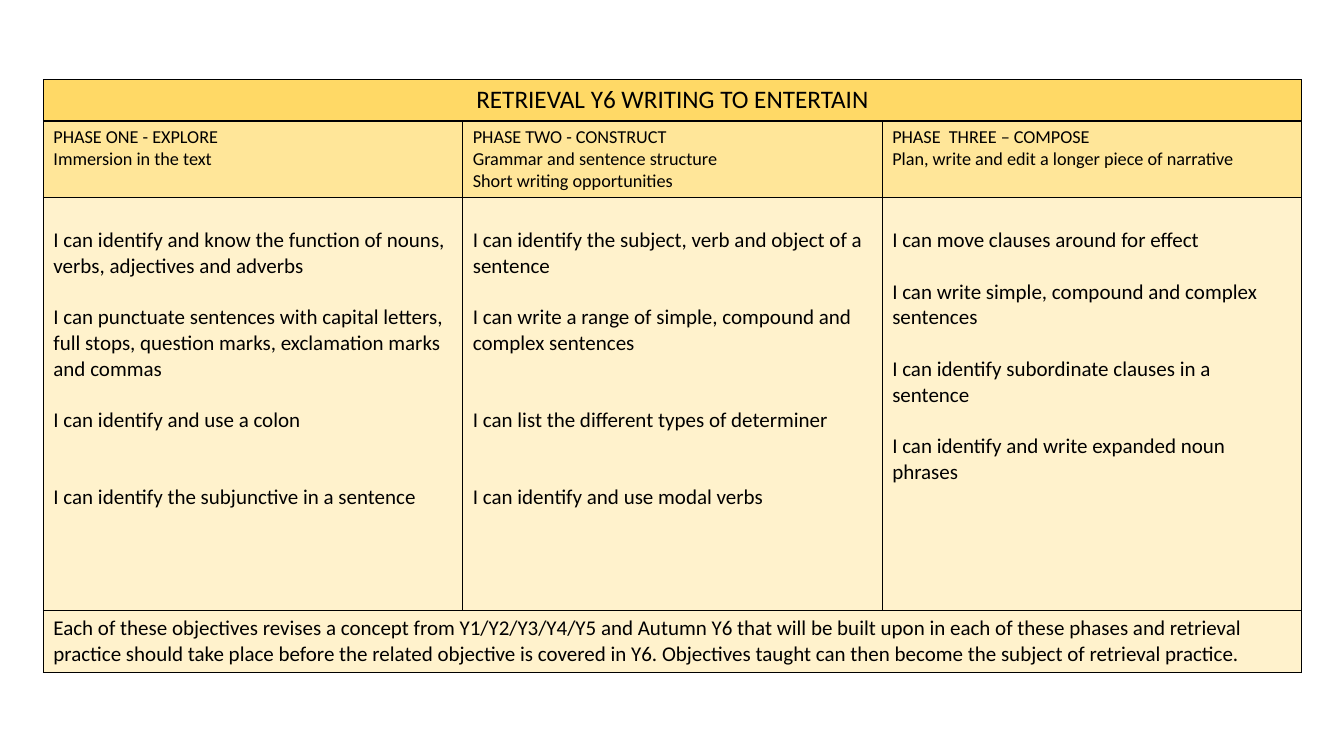
"""Build the Year 6 retrieval overview slide with its three writing phases."""
from lxml import etree
from pptx import Presentation
from pptx.dml.color import RGBColor
from pptx.enum.text import PP_ALIGN
from pptx.oxml.ns import qn
from pptx.util import Inches, Pt

LEFT, CENTER = PP_ALIGN.LEFT, PP_ALIGN.CENTER
FONT = "Calibri"
COLORS = {"title": "FFD966", "phase": "FFE699", "body": "FFF2CC", "ink": "000000"}
BODY_SIZE = 15
LINE = 18.3
ROW_HEIGHTS = [0.41, 0.75, 4.1, 0.59]
COLUMN_WIDTH = 4.16

TITLE = "RETRIEVAL Y6 WRITING TO ENTERTAIN"
PHASES = [
    ["PHASE ONE - EXPLORE", "Immersion in the text"],
    ["PHASE TWO - CONSTRUCT", "Grammar and sentence structure",
     "Short writing opportunities"],
    ["PHASE  THREE – COMPOSE", "Plan, write and edit a longer piece of narrative"],
]
OBJECTIVES = [
    ["I can identify and know the function of nouns, verbs, adjectives and adverbs",
     "I can punctuate sentences with capital letters, full stops, question marks, "
     "exclamation marks and commas",
     "I can identify and use a colon",
     "I can identify the subjunctive in a sentence"],
    ["I can identify the subject, verb and object of a sentence",
     "I can write a range of simple, compound and complex sentences",
     "I can list the different types of determiner",
     "I can identify and use modal verbs"],
    ["I can move clauses around for effect",
     "I can write simple, compound and complex sentences",
     "I can identify subordinate clauses in a sentence",
     "I can identify and write expanded noun phrases"],
]
LINE_GAPS = [[0, 1, 1, 2], [0, 1, 2, 2], [0, 1, 1, 1]]
SUMMARY = (
    "Each of these objectives revises a concept from Y1/Y2/Y3/Y4/Y5 and Autumn Y6 "
    "that will be built upon in each of these phases and retrieval practice should "
    "take place before the related objective is covered in Y6. Objectives taught can "
    "then become the subject of retrieval practice."
)


def set_borders(cell):
    """Draw a thin line on every side of a cell."""
    properties = cell._tc.get_or_add_tcPr()
    for side in ("a:lnL", "a:lnR", "a:lnT", "a:lnB"):
        line = etree.SubElement(properties, qn(side), w=str(Pt(1)))
        fill = etree.SubElement(line, qn("a:solidFill"))
        etree.SubElement(fill, qn("a:srgbClr"), val=COLORS["ink"])


def fill_cell(cell, color):
    """Give a cell its background colour."""
    cell.fill.solid()
    cell.fill.fore_color.rgb = RGBColor.from_string(COLORS[color])


def write_cell(cell, lines, size=BODY_SIZE, align=LEFT, gaps=None, margin_top=0.05):
    """Write one paragraph per line, with gaps counted in blank line heights."""
    cell.margin_top = Inches(margin_top)
    frame = cell.text_frame
    for index, text in enumerate(lines):
        para = frame.paragraphs[0] if index == 0 else frame.add_paragraph()
        para.alignment = align
        if gaps:
            para.space_before = Pt(gaps[index] * LINE)
        span = para.add_run()
        span.text = text
        span.font.name = FONT
        span.font.size = Pt(size)
        span.font.bold = False
        span.font.color.rgb = RGBColor.from_string(COLORS["ink"])


def add_grid(page):
    """Add the bordered table with full-width first and last rows."""
    columns = len(PHASES)
    frame = page.shapes.add_table(
        len(ROW_HEIGHTS), columns, Inches(0.43), Inches(0.79),
        Inches(COLUMN_WIDTH * columns), Inches(sum(ROW_HEIGHTS)))
    table = frame.table
    table.first_row = False
    table.horz_banding = False
    for column in table.columns:
        column.width = Inches(COLUMN_WIDTH)
    row_colors = ["title", "phase", "body", "body"]
    for row, height, color in zip(table.rows, ROW_HEIGHTS, row_colors):
        row.height = Inches(height)
        for cell in row.cells:
            set_borders(cell)
            fill_cell(cell, color)
    for row in (0, len(ROW_HEIGHTS) - 1):
        table.cell(row, 0).merge(table.cell(row, columns - 1))
    return table


def main():
    """Create the deck and save it."""
    deck = Presentation()
    deck.slide_width, deck.slide_height = Inches(13.33), Inches(7.5)
    page = deck.slides.add_slide(deck.slide_layouts[6])
    table = add_grid(page)
    write_cell(table.cell(0, 0), [TITLE], size=18, align=CENTER)
    for column, (phase, goals, gaps) in enumerate(zip(PHASES, OBJECTIVES, LINE_GAPS)):
        write_cell(table.cell(1, column), phase, size=13)
        write_cell(table.cell(2, column), goals, gaps=gaps, margin_top=0.3)
    write_cell(table.cell(3, 0), [SUMMARY])
    deck.save("out.pptx")


if __name__ == "__main__":
    main()
